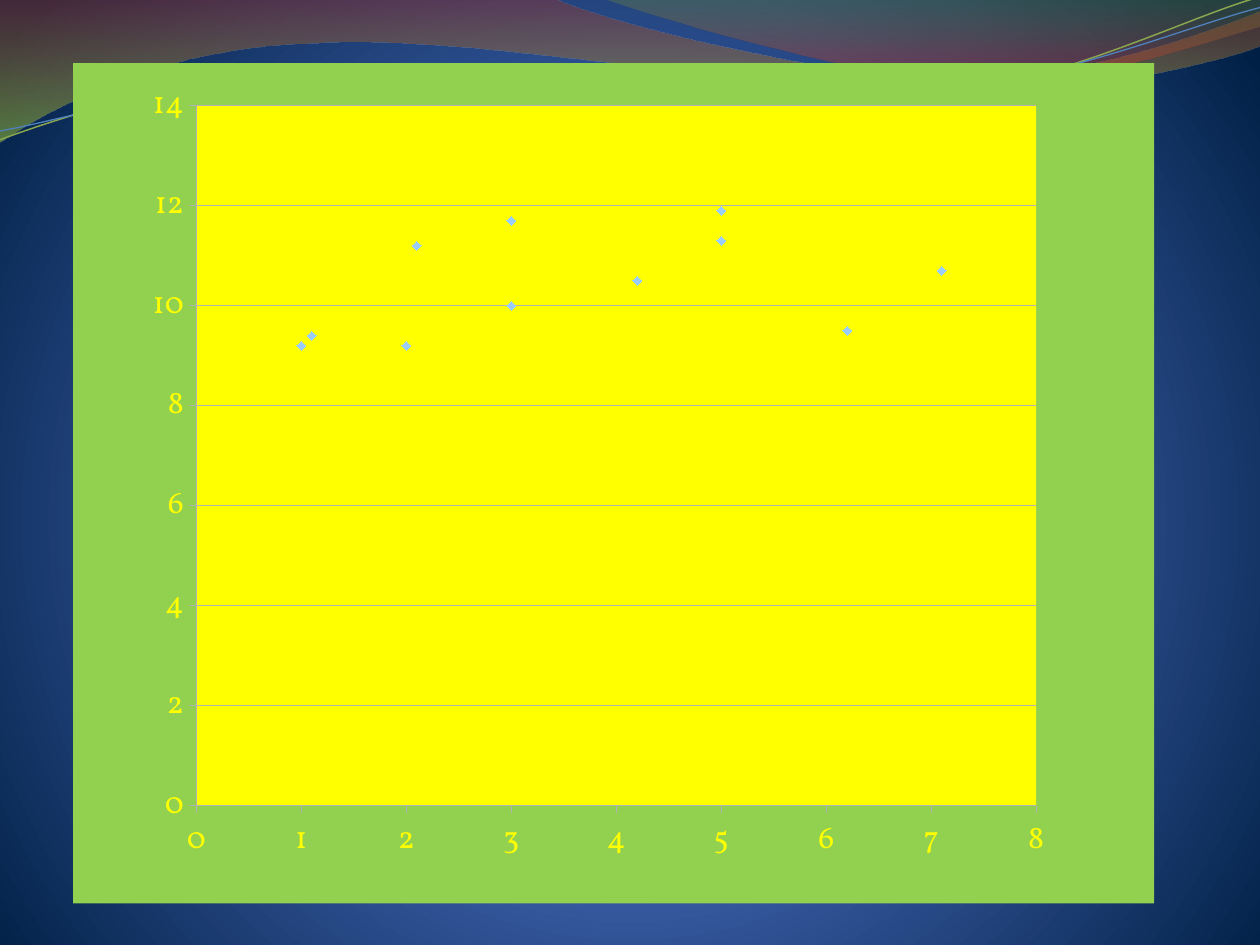
"""Build a slide with a scatter chart over a blue background with waves."""
import lxml.etree
import pptx
import pptx.chart.data
import pptx.dml.color
import pptx.enum.chart
import pptx.oxml
import pptx.oxml.ns
import pptx.util

Pt = pptx.util.Pt
qn = pptx.oxml.ns.qn
RGB = pptx.dml.color.RGBColor.from_string
NAMESPACES = pptx.oxml.ns.nsdecls("a", "c")
COLORS = {
    "sky": "4D75D6", "blue": "4E72C7", "navy": "001F44",
    "red": "973330", "lime": "95C238", "olive": "769537", "crimson": "BE3330",
    "green line": "89A54F", "blue line": "4F81BD",
    "frame": "92D050", "yellow": "FFFF00", "grid": "B3B3B3", "marker": "99CCFF",
}


def gradient_fill(stops, direction):
    """Return a gradient fill from (position, colour, opacity) stops."""
    marks = "".join(
        f'<a:gs pos="{position * 1000}"><a:srgbClr val="{COLORS[color]}">'
        + (f'<a:alpha val="{opacity * 1000}"/>' if opacity < 100 else "")
        + "</a:srgbClr></a:gs>"
        for position, color, opacity in stops)
    return pptx.oxml.parse_xml(
        f'<a:gradFill {NAMESPACES} rotWithShape="1"><a:gsLst>{marks}</a:gsLst>{direction}</a:gradFill>')


def add_curve(page, start, steps, closed):
    """Draw a freeform of straight (x, y) steps and six-number Bezier steps."""
    vertices = [(Pt(x), Pt(y)) for step in steps for x, y in zip(step[::2], step[1::2])]
    builder = page.shapes.build_freeform(Pt(start[0]), Pt(start[1]), scale=1.0)
    builder.add_line_segments(vertices, close=closed)
    shape = builder.convert_to_shape()
    shape.shadow.inherit = False
    outline = shape.element.find(".//" + qn("a:path"))
    segments = iter(outline.findall(qn("a:lnTo")))
    for step in steps:
        pieces = [next(segments) for _ in range(len(step) // 2)]
        if len(pieces) == 3:
            bezier = lxml.etree.Element(qn("a:cubicBezTo"))
            pieces[0].addprevious(bezier)
            for piece in pieces:
                bezier.append(piece[0])
                outline.remove(piece)
    return shape


deck = pptx.Presentation()
deck.slide_width, deck.slide_height = Pt(720), Pt(540)
page = deck.slides.add_slide(deck.slide_layouts[6])

page.background.fill.solid()
solid = page.element.find(".//" + qn("p:bgPr")).find(qn("a:solidFill"))
solid.getparent().replace(solid, gradient_fill(
    [(0, "sky", 100), (25, "blue", 100), (100, "navy", 100)],
    '<a:path path="circle"><a:fillToRect l="10000" t="110000" r="10000" b="100000"/></a:path>'))

wide_wave = [
    (316.8, -0.7),
    (342.7, 12.2, 478.1, 45.4, 545.8, 45.4),
    (617, 45.4, 689.8, 18.7, 720, 6.5),
    (720.7, 25.9),
    (707.8, 31.7, 626.4, 54.7, 537.1, 54),
    (447.8, 54, 275, 20.2, 185, 24.5),
    (92.9, 25.9, 33.1, 59.8, -0.7, 81.4),
]
right_wave = [
    (366.5, 7.9, 491, 44.6, 553.7, 46.8),
    (616.3, 49.7, 691.9, 23, 720, 15.1),
    (720, 0),
]
for start, steps, stops in [
        ((0, 0), wide_wave, [(0, "red", 45), (100, "lime", 55)]),
        ((344.9, -0.7), right_wave, [(0, "olive", 30), (80, "crimson", 45)])]:
    wave = add_curve(page, start, steps, True)
    wave.line.fill.background()
    wave.fill.solid()
    solid = wave.element.spPr.find(qn("a:solidFill"))
    wave.element.spPr.replace(solid, gradient_fill(stops, '<a:lin ang="5400000" scaled="1"/>'))

green_strand = [
    (33.8, 51.7, 114.1, 29.4, 199.8, 29.9),
    (284.8, 30.3, 425.9, 67.3, 512.5, 64.8),
    (599.1, 62.4, 676.5, 25.7, 720.2, 15.6),
]
blue_strand = [
    (32.9, 53.7, 118.3, 32.5, 204.1, 33),
    (290.6, 33.4, 428.9, 63.8, 515.5, 61.4),
    (601.4, 59.6, 678.4, 30.1, 721.4, 21.3),
]
for start, steps, color, width in [
        ((-1.4, 62.9), green_strand, "green line", 0.85),
        ((-1.1, 57.9), blue_strand, "blue line", 0.75)]:
    strand = add_curve(page, start, steps, False)
    strand.rotation = 357.3
    strand.fill.background()
    strand.line.color.rgb = RGB(COLORS[color])
    strand.line.width = Pt(width)

data = pptx.chart.data.XyChartData()
points = data.add_series("Series 1")
for x, y in [(1, 9.2), (1.1, 9.4), (2, 9.2), (2.1, 11.2), (3, 11.7), (3, 10),
             (4.2, 10.5), (5, 11.9), (5, 11.3), (6.2, 9.5), (7.1, 10.7)]:
    points.add_data_point(x, y)
chart = page.shapes.add_chart(
    pptx.enum.chart.XL_CHART_TYPE.XY_SCATTER,
    Pt(41.76), Pt(36), Pt(617.76), Pt(480.24), data).chart
chart.has_title = False
chart.has_legend = False
chart.font.name = "Vollkorn"
chart.font.size = Pt(18)
chart.font.color.rgb = RGB(COLORS["yellow"])

for axis, maximum, unit in [(chart.category_axis, 8, 1), (chart.value_axis, 14, 2)]:
    axis.minimum_scale, axis.maximum_scale, axis.major_unit = 0, maximum, unit
    axis.major_tick_mark = pptx.enum.chart.XL_TICK_MARK.OUTSIDE
    axis.minor_tick_mark = pptx.enum.chart.XL_TICK_MARK.NONE
    axis.format.line.color.rgb = RGB(COLORS["grid"])
    axis.format.line.width = Pt(0.75)
chart.category_axis.has_major_gridlines = False
chart.value_axis.has_major_gridlines = True
gridline = chart.value_axis.major_gridlines.format.line
gridline.color.rgb = RGB(COLORS["grid"])
gridline.width = Pt(0.75)

plot = chart.plots[0]
plot.vary_by_categories = False
series = plot.series[0]
series.format.line.fill.background()
series.marker.style = pptx.enum.chart.XL_MARKER_STYLE.DIAMOND
series.marker.size = 5
series.marker.format.fill.solid()
series.marker.format.fill.fore_color.rgb = RGB(COLORS["marker"])
series.marker.format.line.color.rgb = RGB(COLORS["marker"])

plot_area = chart.element.find(".//" + qn("c:plotArea"))
for layout in plot_area.findall(qn("c:layout")):
    plot_area.remove(layout)
settings = [("layoutTarget", "inner"), ("xMode", "edge"), ("yMode", "edge"),
            ("x", 0.114), ("y", 0.051), ("w", 0.777), ("h", 0.833)]
entries = "".join(f'<c:{tag} val="{value}"/>' for tag, value in settings)
plot_area.insert(0, pptx.oxml.parse_xml(
    f"<c:layout {NAMESPACES}><c:manualLayout>{entries}</c:manualLayout></c:layout>"))

frame_fill, plot_fill = [
    pptx.oxml.parse_xml(
        f'<c:spPr {NAMESPACES}><a:solidFill><a:srgbClr val="{COLORS[color]}"/></a:solidFill>'
        "<a:ln><a:noFill/></a:ln></c:spPr>")
    for color in ("frame", "yellow")]
chart.element.find(qn("c:chart")).addnext(frame_fill)
plot_area.append(plot_fill)

deck.save("out.pptx")
